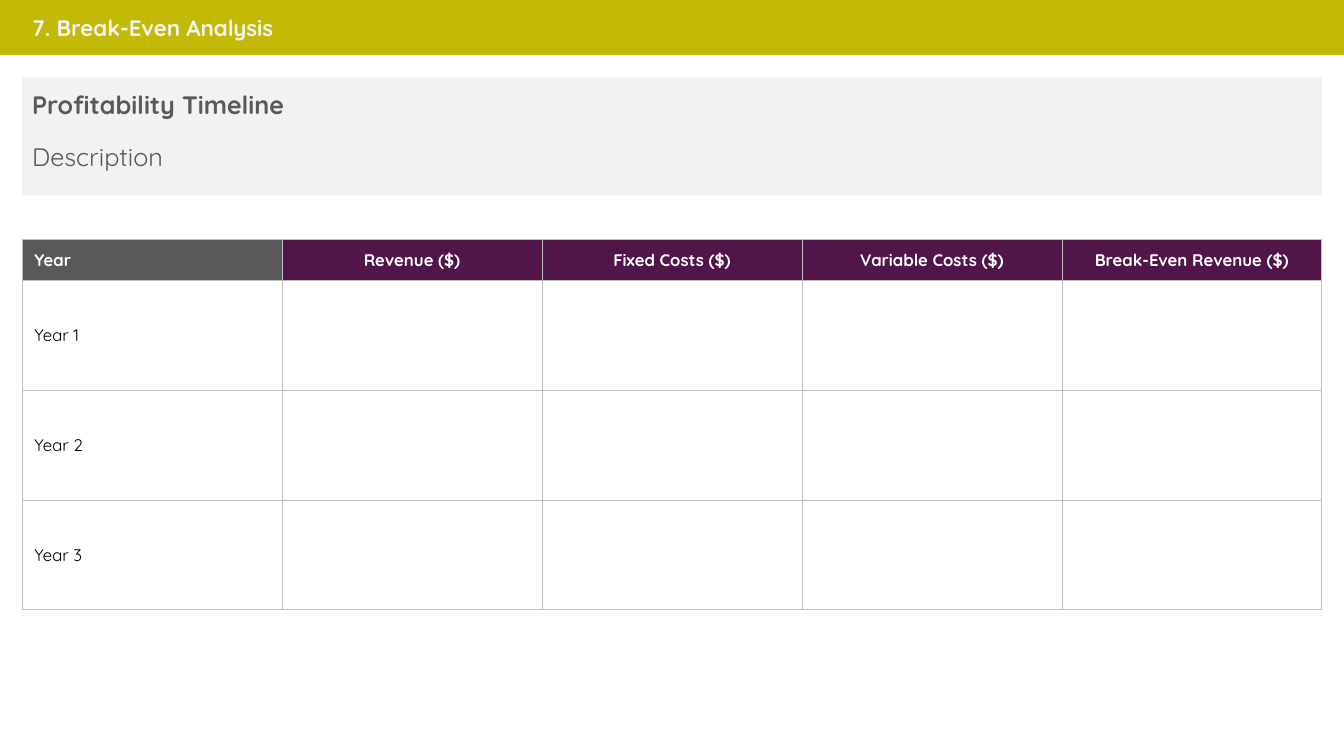
import pptx
import pptx.dml.color
import pptx.enum.shapes
import pptx.enum.text
import pptx.oxml
import pptx.oxml.ns
import pptx.util

WIDE = pptx.util.Inches(13.33)
HIGH = pptx.util.Inches(7.5)
FONT = "Quicksand"
LEFT, SPAN = 1.65, 96.7

LIME, PLUM, GREY = "C3BA05", "51154A", "595959"
PALE, RULE, WHITE, BLACK = "F2F2F2", "BFBFBF", "FFFFFF", "000000"

HEADS = ["Year", "Revenue ($)", "Fixed Costs ($)", "Variable Costs ($)",
         "Break-Even Revenue ($)"]
YEARS = ["Year 1", "Year 2", "Year 3"]
HEAD_ROW, YEAR_ROW = 5.47, 14.53


def color(code):
    return pptx.dml.color.RGBColor.from_string(code)


def across(share):
    """Turn a percentage of the slide's width into a length."""
    return round(WIDE * share / 100)


def down(share):
    """Turn a percentage of the slide's height into a length."""
    return round(HIGH * share / 100)


def place(x, y, w, h):
    return across(x), down(y), across(w), down(h)


def paint(item, code):
    item.fill.solid()
    item.fill.fore_color.rgb = color(code)


def write(para, text, size, code, bold=False):
    run = para.add_run()
    run.text = text
    run.font.name = FONT
    run.font.size = pptx.util.Pt(size)
    run.font.bold = bold
    run.font.color.rgb = color(code)


def add_band(slide, area, code, line=None):
    band = slide.shapes.add_shape(
        pptx.enum.shapes.MSO_SHAPE.RECTANGLE, *place(*area))
    band.shadow.inherit = False
    paint(band, code)
    if line:
        band.line.color.rgb = color(code)
        band.line.width = pptx.util.Pt(line)
    else:
        band.line.fill.background()


def add_label(slide, area, text, size, code, bold=False):
    frame = slide.shapes.add_textbox(*place(*area)).text_frame
    frame.word_wrap = True
    frame.auto_size = pptx.enum.text.MSO_AUTO_SIZE.SHAPE_TO_FIT_TEXT
    para = frame.paragraphs[0]
    write(para, text, size, code, bold)
    return para


def add_rules(cell):
    """Draw a thin line on all four sides of a cell."""
    props = cell._tc.get_or_add_tcPr()
    for side in ("lnL", "lnR", "lnT", "lnB"):
        props.append(pptx.oxml.parse_xml(
            f'<a:{side} {pptx.oxml.ns.nsdecls("a")} w="{pptx.util.Pt(0.5)}">'
            f'<a:solidFill><a:srgbClr val="{RULE}"/></a:solidFill>'
            f'</a:{side}>'))


def fill_cell(cell, text, back, ink, bold, first):
    add_rules(cell)
    paint(cell, back)
    cell.vertical_anchor = pptx.enum.text.MSO_ANCHOR.MIDDLE
    cell.margin_left = pptx.util.Inches(0.12 if first else 0.01)
    cell.margin_right = cell.margin_top = pptx.util.Inches(0.01)
    cell.margin_bottom = 0
    if text:
        para = cell.text_frame.paragraphs[0]
        if not first:
            para.alignment = pptx.enum.text.PP_ALIGN.CENTER
        write(para, text, 12, ink, bold)


def add_costs(slide, top):
    rows = [HEADS] + [[year] + [""] * (len(HEADS) - 1) for year in YEARS]
    high = HEAD_ROW + YEAR_ROW * len(YEARS)
    table = slide.shapes.add_table(
        len(rows), len(HEADS), *place(LEFT, top, SPAN, high)).table
    table.horz_banding = False
    for col in table.columns:
        col.width = across(SPAN / len(HEADS))
    for r, row in enumerate(rows):
        head = r == 0
        table.rows[r].height = down(HEAD_ROW if head else YEAR_ROW)
        for c, text in enumerate(row):
            first = c == 0
            back = (GREY if first else PLUM) if head else WHITE
            ink = WHITE if head else BLACK
            fill_cell(table.cell(r, c), text, back, ink, head, first)


def main():
    deck = pptx.Presentation()
    deck.slide_width, deck.slide_height = WIDE, HIGH
    slide = deck.slides.add_slide(deck.slide_layouts[6])

    add_band(slide, (LEFT, 10.27, SPAN, 15.6), PALE)
    add_label(slide, (LEFT, 11.2, 52.14, 5.33), "Profitability Timeline",
              18, GREY, True)
    about = add_label(slide, (LEFT, 17.47, 86.27, 5.73), "Description",
                      18, GREY)
    about.line_spacing = 1.15
    about.space_after = pptx.util.Pt(8)

    add_band(slide, (0, 0, 100, 7.2), LIME, 1.5)
    add_label(slide, (LEFT, 1.2, 60.62, 4.93), "7. Break-Even Analysis",
              16, PALE, True)
    add_costs(slide, 31.6)
    deck.save("out.pptx")


if __name__ == "__main__":
    main()
